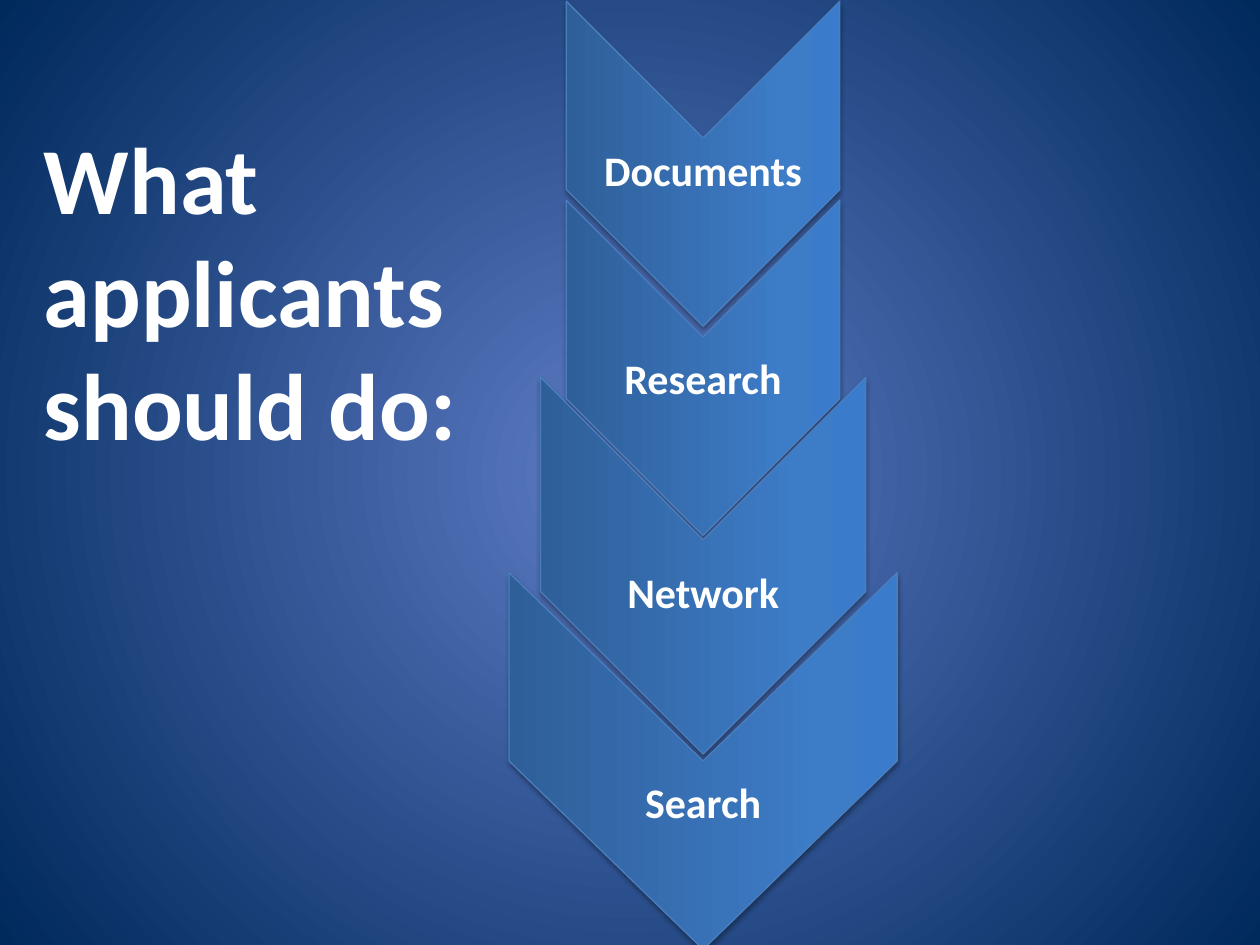
"""Build a slide with a heading and four stacked chevrons pointing down."""
from lxml.etree import SubElement
from pptx import Presentation
from pptx.dml.color import RGBColor
from pptx.enum.shapes import MSO_SHAPE
from pptx.enum.text import MSO_ANCHOR, MSO_AUTO_SIZE, PP_ALIGN
from pptx.oxml import parse_xml
from pptx.oxml.ns import nsdecls, qn
from pptx.util import Inches, Pt

THEME = {
    "font": "Calibri",
    "text": "FFFFFF",
    "line": "4B7EBC",
    "shadow": "000000",
    "background": [(0, "5E7CC5"), (100, "00295C")],
    "chevron": [(0, "2F5F99"), (80, "3D7CC7"), (100, "3A7CCB")],
    "heading_size": 54,
    "label_size": 24,
}
RADIAL = '<a:path path="circle"><a:fillToRect l="50000" t="50000" r="50000" b="50000"/></a:path>'
LINEAR = '<a:lin ang="16200000" scaled="0"/>'


def set_gradient(owner, fill, stops, direction):
    """Give a fill the listed colour stops and direction."""
    fill.gradient()
    old = owner.find(".//" + qn("a:gradFill"))
    gs = "".join(f'<a:gs pos="{pos * 1000}"><a:srgbClr val="{color}"/></a:gs>' for pos, color in stops)
    new = parse_xml(f'<a:gradFill {nsdecls("a")} rotWithShape="1"><a:gsLst>{gs}</a:gsLst>{direction}</a:gradFill>')
    old.getparent().replace(old, new)


def add_text(shapes, text, *, box, size, align=PP_ALIGN.LEFT, anchor=MSO_ANCHOR.TOP,
             margin=None, line_spacing=None, space_after=None, auto_size=MSO_AUTO_SIZE.NONE):
    """Add a bold, wrapping text box."""
    tf = shapes.add_textbox(*(Inches(v) for v in box)).text_frame
    tf.word_wrap = True
    tf.auto_size = auto_size
    tf.vertical_anchor = anchor
    if margin is not None:
        tf.margin_left = tf.margin_top = tf.margin_right = tf.margin_bottom = Inches(margin)
    p = tf.paragraphs[0]
    p.alignment = align
    p.line_spacing = line_spacing
    p.space_after = space_after
    r = p.add_run()
    r.text = text
    r.font.name = THEME["font"]
    r.font.size = Pt(size)
    r.font.bold = True
    r.font.color.rgb = RGBColor.from_string(THEME["text"])


prs = Presentation()
prs.slide_width, prs.slide_height = Inches(10), Inches(7.5)
s = prs.slides.add_slide(prs.slide_layouts[6])
set_gradient(s.element, s.background.fill, THEME["background"], RADIAL)

center_x = 5.58
steps = [
    ("Documents", 1.3, 2.58, 2.17, 0.99, 0.77),
    ("Research", 2.92, 2.66, 2.17, 2.62, 0.8),
    ("Network", 4.49, 2.99, 2.58, 4.27, 0.9),
    ("Search", 6.04, 2.99, 3.08, 5.94, 0.9),
]
for label, center_y, length, breadth, text_top, text_height in steps:
    group = s.shapes.add_group_shape()
    sp = group.shapes.add_shape(
        MSO_SHAPE.CHEVRON, Inches(center_x - length / 2), Inches(center_y - breadth / 2),
        Inches(length), Inches(breadth))
    sp.rotation = 90
    set_gradient(sp.element, sp.fill, THEME["chevron"], LINEAR)
    sp.line.color.rgb = RGBColor.from_string(THEME["line"])
    sp.line.width = Pt(0.75)
    sp.shadow.inherit = False
    shadow = SubElement(sp.element.spPr.find(qn("a:effectLst")), qn("a:outerShdw"),
                        blurRad=str(Pt(3.1)), dist=str(Pt(1.8)), dir="5400000", rotWithShape="0")
    color = SubElement(shadow, qn("a:srgbClr"), val=THEME["shadow"])
    SubElement(color, qn("a:alpha"), val="35000")
    add_text(group.shapes, label, box=(center_x - breadth / 2, text_top, breadth, text_height),
             size=THEME["label_size"], align=PP_ALIGN.CENTER, anchor=MSO_ANCHOR.MIDDLE,
             margin=0.01, line_spacing=0.9, space_after=Pt(8.4))

add_text(s.shapes, "What applicants should do:", box=(0.25, 0.9, 3.5, 2.83),
         size=THEME["heading_size"], auto_size=MSO_AUTO_SIZE.SHAPE_TO_FIT_TEXT)

prs.save("out.pptx")
